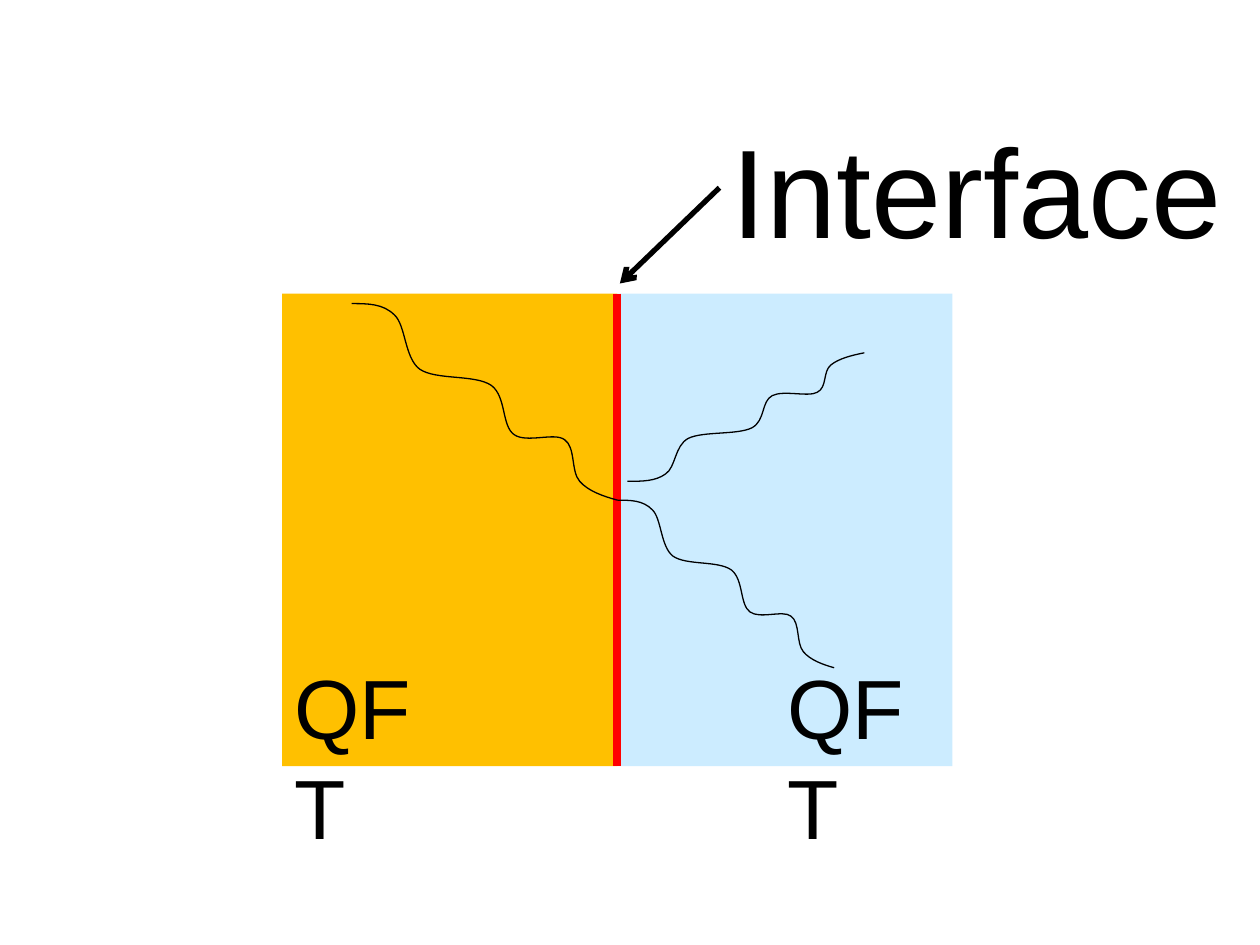
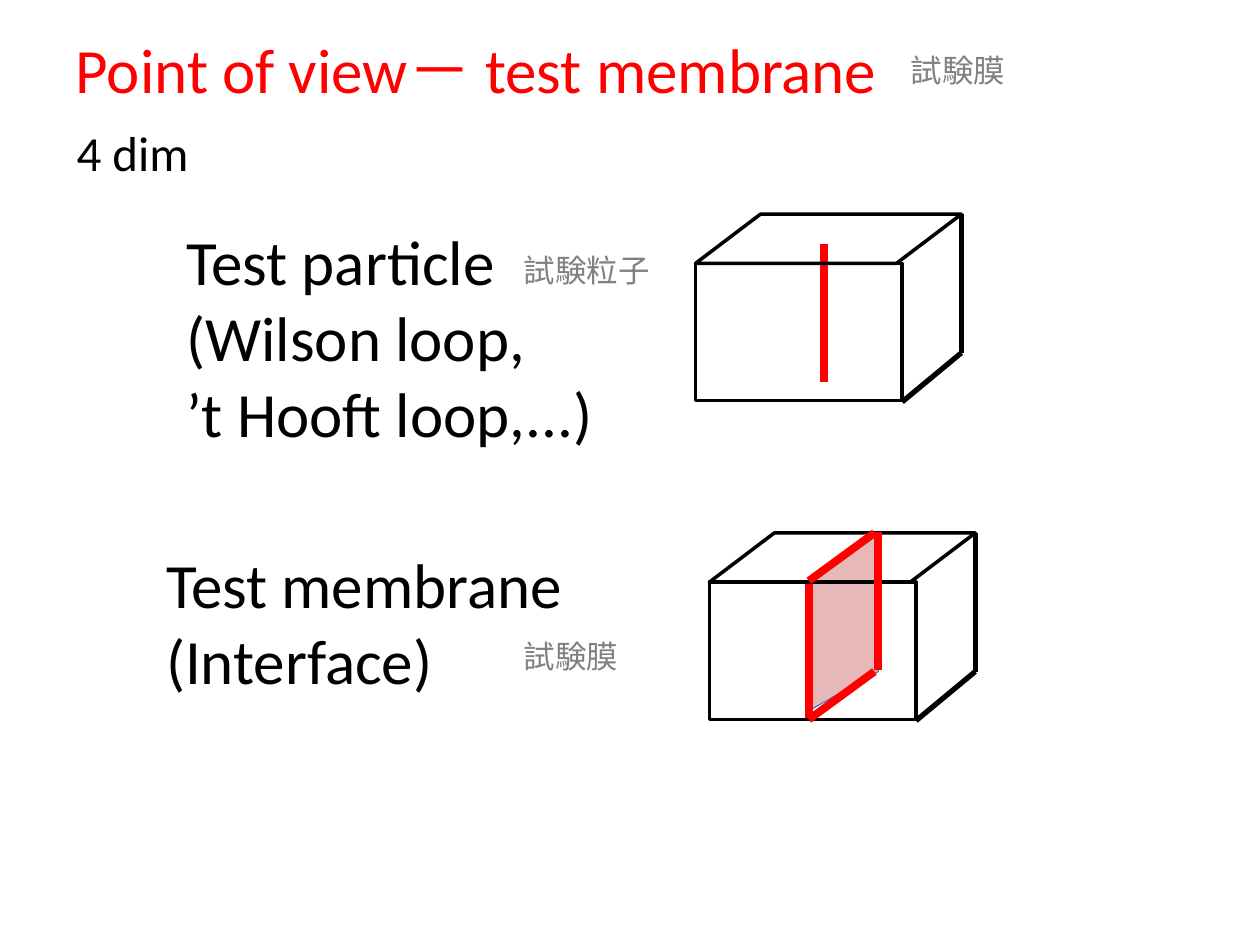
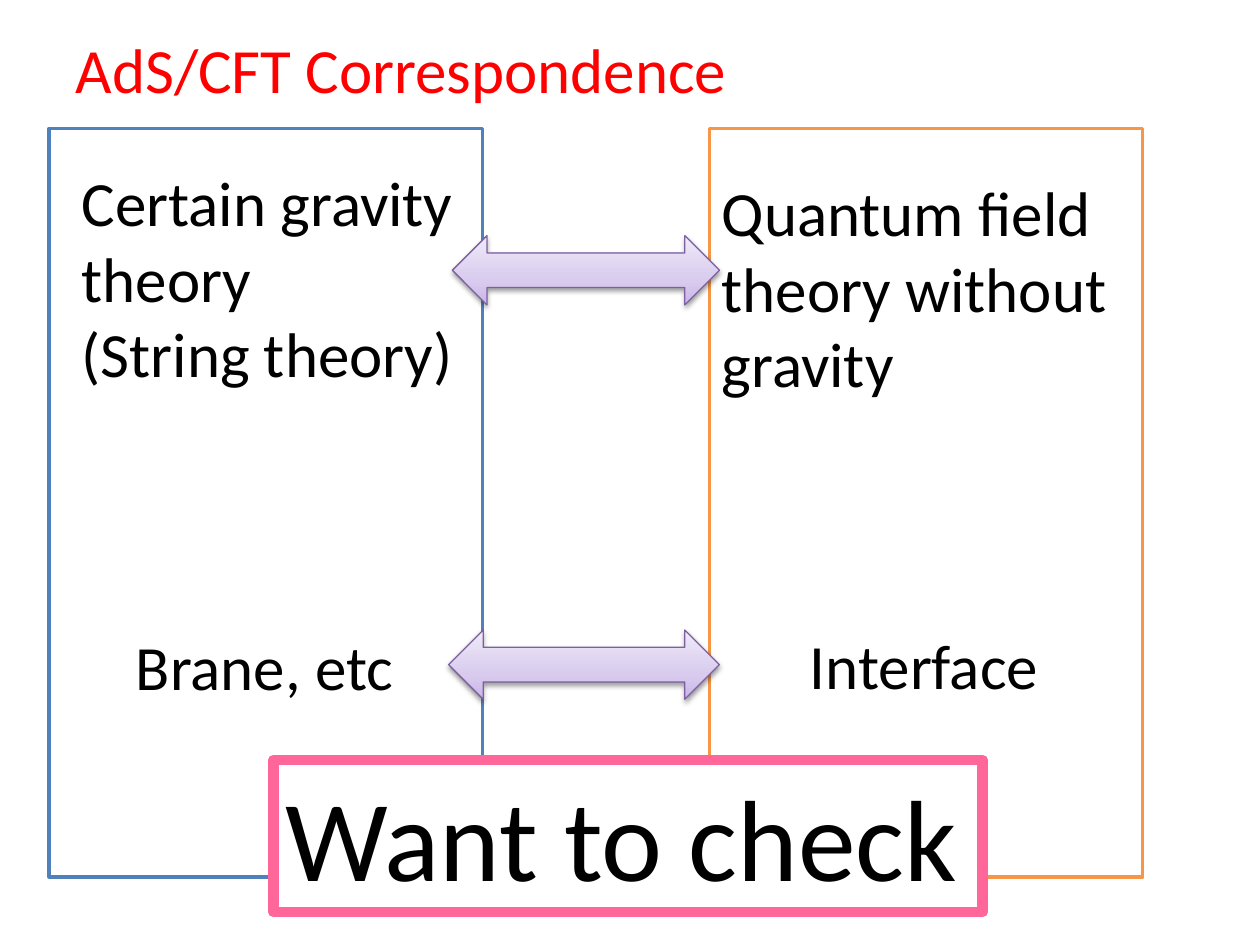
"""Build three slides on interfaces, test membranes and the AdS/CFT correspondence."""
from copy import deepcopy
from typing import NamedTuple

from lxml import etree
from pptx import Presentation
from pptx.dml.color import RGBColor
from pptx.enum import shapes, text
from pptx.oxml import parse_xml
from pptx.oxml.ns import nsdecls, qn
from pptx.util import Inches, Pt

BLACK = RGBColor(0x00, 0x00, 0x00)
WHITE = RGBColor(0xFF, 0xFF, 0xFF)
RED = RGBColor(0xFF, 0x00, 0x00)
GREY = RGBColor(0x80, 0x80, 0x80)
AMBER = RGBColor(0xFF, 0xC0, 0x00)
SKY = RGBColor(0xCC, 0xEC, 0xFF)
ROSE = RGBColor(0xE6, 0xB9, 0xB8)
STEEL = RGBColor(0x4B, 0x7E, 0xBC)
BLUE = RGBColor(0x4F, 0x81, 0xBD)
ORANGE = RGBColor(0xF7, 0x96, 0x46)
PINK = RGBColor(0xFF, 0x66, 0x99)
PURPLE = RGBColor(0x7D, 0x60, 0xA0)
LILACS = [(0, RGBColor(0xC9, 0xB5, 0xE8)), (0.35, RGBColor(0xD8, 0xCB, 0xEE)),
          (1, RGBColor(0xF0, 0xEA, 0xF9))]

RECT = shapes.MSO_SHAPE.RECTANGLE
WAVE_W, WAVE_H = 2.11, 1.56
WAVE = [(0, 0), (0.13, 0), (0.25, 0), (0.34, 0.09), (0.43, 0.17), (0.42, 0.43), (0.54, 0.52),
        (0.67, 0.61), (0.98, 0.56), (1.11, 0.65), (1.23, 0.74), (1.19, 0.97), (1.29, 1.04),
        (1.39, 1.11), (1.61, 1.02), (1.69, 1.08), (1.78, 1.14), (1.74, 1.33), (1.81, 1.41),
        (1.88, 1.49), (2, 1.53), (2.11, 1.56)]


class Box(NamedTuple):
    """Left, top, width and height in inches."""
    x: float
    y: float
    w: float
    h: float

    def emu(self):
        """Return the four lengths for python-pptx."""
        return [Inches(v) for v in self]


class Label(NamedTuple):
    """A text box with one paragraph per line."""
    box: Box
    lines: list[str]
    size: float = 36
    color: RGBColor = BLACK
    font: str = "Calibri"
    wrap: bool = False


def add_run(p, words: str, size: float, color: RGBColor, font: str) -> None:
    """Add one formatted run to a paragraph."""
    r = p.add_run()
    r.text = words
    r.font.size, r.font.name = Pt(size), font
    r.font.color.rgb = color


def add_label(s, label: Label):
    """Draw a label and return its shape."""
    sp = s.shapes.add_textbox(*label.box.emu())
    tf = sp.text_frame
    tf.word_wrap = label.wrap
    tf.auto_size = text.MSO_AUTO_SIZE.SHAPE_TO_FIT_TEXT
    for i, words in enumerate(label.lines):
        p = tf.add_paragraph() if i else tf.paragraphs[0]
        add_run(p, words, label.size, label.color, label.font)
    return sp


def add_title(s, words: str, width: float) -> None:
    """Place and fill the title placeholder."""
    sp = s.shapes.title
    sp.left, sp.top, sp.width, sp.height = Box(0.5, 0.3, width, 0.48).emu()
    tf = sp.text_frame
    tf.auto_size = text.MSO_AUTO_SIZE.NONE
    tf.vertical_anchor = text.MSO_ANCHOR.MIDDLE
    p = tf.paragraphs[0]
    p.alignment = text.PP_ALIGN.LEFT
    add_run(p, words, 36, RED, "Calibri")


def paint(sp, fill: RGBColor | None, line: RGBColor | None = None, width: float = 0) -> None:
    """Set the fill and outline of a shape and drop its shadow."""
    if fill is None:
        sp.fill.background()
    else:
        sp.fill.solid()
        sp.fill.fore_color.rgb = fill
    if line is None:
        sp.line.fill.background()
    else:
        sp.line.color.rgb, sp.line.width = line, Pt(width)
    sp.shadow.inherit = False


def add_preset(s, kind, box: Box, fill: RGBColor | None, line: RGBColor | None = None,
               width: float = 0):
    """Draw a painted preset shape."""
    sp = s.shapes.add_shape(kind, *box.emu())
    paint(sp, fill, line, width)
    return sp


def add_line(s, x1: float, y1: float, x2: float, y2: float, color: RGBColor = BLACK,
             width: float = 3, arrow: bool = False) -> None:
    """Draw a straight line, with an arrowhead at its end if wanted."""
    cx = s.shapes.add_connector(shapes.MSO_CONNECTOR.STRAIGHT, Inches(x1), Inches(y1),
                                Inches(x2), Inches(y2))
    cx.line.color.rgb, cx.line.width = color, Pt(width)
    if arrow:
        etree.SubElement(cx.line._get_or_add_ln(), qn("a:tailEnd"), type="arrow")
    etree.SubElement(cx._element.spPr, qn("a:effectLst"))


def add_outline(s, points: list[tuple[float, float]], close: bool):
    """Draw a freeform through points given in inches."""
    first, *rest = [(Inches(x), Inches(y)) for x, y in points]
    builder = s.shapes.build_freeform(*first)
    builder.add_line_segments(rest, close=close)
    return builder.convert_to_shape()


def add_wave(s, box: Box) -> None:
    """Draw the wavy ray across a box; a negative height makes it rise."""
    sp = add_outline(s, [(box.x + x * box.w / WAVE_W, box.y + y * box.h / WAVE_H)
                         for x, y in WAVE], close=False)
    paint(sp, None, BLACK, 0.75)
    segments = list(sp._element.iter(qn("a:lnTo")))
    for i in range(0, len(segments), 3):
        curve = etree.SubElement(segments[i].getparent(), qn("a:cubicBezTo"))
        for segment in segments[i:i + 3]:
            curve.append(segment[0])
            segment.getparent().remove(segment)


def add_cuboid(s, x: float, y: float) -> None:
    """Draw a see-through cuboid with its top edge at y."""
    width, height, depth, rise = 1.64, 1.09, 0.47, 0.39
    right, front = x + width + depth, y + rise
    add_preset(s, RECT, Box(x, front, width, height), None, BLACK, 2)
    top = add_preset(s, shapes.MSO_SHAPE.PARALLELOGRAM, Box(x, y, width + depth, rise),
                     None, BLACK, 2)
    top.adjustments[0] = 1.32
    add_line(s, right, y + height + 0.01, x + width, front + height + 0.01)
    add_line(s, right, y, right, y + height + 0.01)


def add_double_arrow(s, box: Box) -> None:
    """Draw a shaded two-way arrow."""
    sp = add_preset(s, shapes.MSO_SHAPE.LEFT_RIGHT_ARROW, box, None, PURPLE, 0.75)
    sp.fill.gradient()
    sp.fill.gradient_angle = 90
    stop = next(sp._element.iter(qn("a:gs")))
    stop.addnext(deepcopy(stop))
    for gs, (position, color) in zip(sp.fill.gradient_stops, LILACS):
        gs.position, gs.color.rgb = position, color
    sp._element.spPr.find(qn("a:effectLst")).append(parse_xml(
        f'<a:outerShdw {nsdecls("a")} blurRad="{Pt(3.1)}" dist="{Pt(1.6)}" dir="5400000" '
        'rotWithShape="0"><a:srgbClr val="000000"><a:alpha val="38000"/></a:srgbClr>'
        '</a:outerShdw>'))


def interface_slide(prs) -> None:
    """Two theories joined at an interface."""
    s = prs.slides.add_slide(prs.slide_layouts[6])
    left, middle, top, width, height = 2.24, 4.9, 2.33, 2.66, 3.75
    for x, color in ((left, AMBER), (middle, SKY)):
        add_preset(s, RECT, Box(x, top, width, height), color)
    add_line(s, middle, top, middle, top + height, RED, 4.5)
    for x in (left, 6.15):
        add_label(s, Label(Box(x, 5.15, 1.45, 0.91), ["QFT"], 48, font="Arial", wrap=True))
    add_line(s, 5.71, 1.49, 4.92, 2.25, arrow=True)
    add_label(s, Label(Box(5.71, 0.84, 4.13, 1.31), ["Interface"], 72, font="Arial"))
    for ray in (Box(2.79, 2.41, 2.11, 1.56), Box(4.98, 3.82, 1.88, -1.02),
                Box(4.9, 3.97, 1.72, 1.33)):
        add_wave(s, ray)


def membrane_slide(prs) -> None:
    """Test particle and test membrane in four dimensions."""
    s = prs.slides.add_slide(prs.slide_layouts[5])
    membrane = add_outline(s, [(6.42, 4.62), (6.97, 4.22), (6.97, 5.33), (6.42, 5.64)], close=False)
    paint(membrane, ROSE, STEEL, 0.75)
    add_title(s, "Point of view－ test membrane", 8.75)
    add_line(s, 6.54, 3.03, 6.54, 1.94, RED, 4.5)
    add_cuboid(s, 5.52, 1.7)
    add_line(s, 6.42, 5.71, 6.42, 4.62, RED, 4.5)
    add_cuboid(s, 5.63, 4.23)
    for edge in ((6.42, 4.61, 6.94, 4.23), (6.97, 5.32, 6.97, 4.22), (6.42, 5.71, 6.94, 5.33)):
        add_line(s, *edge, RED, 4.5)
    for label in (
        Label(Box(1.38, 1.72, 3.47, 1.92), ["Test particle", "(Wilson loop,", "’t Hooft loop,...)"]),
        Label(Box(1.22, 4.28, 3.44, 1.31), ["Test membrane", "(Interface)"]),
        Label(Box(0.51, 0.92, 1.1, 0.57), ["4 dim"], 28),
        Label(Box(4.06, 1.94, 1.21, 0.4), ["試験粒子"], 18, GREY),
        Label(Box(4.06, 5.01, 0.96, 0.4), ["試験膜"], 18, GREY),
        Label(Box(7.13, 0.36, 0.96, 0.4), ["試験膜"], 18, GREY),
    ):
        add_label(s, label)


def correspondence_slide(prs) -> None:
    """Gravity on the left matched to field theory on the right."""
    s = prs.slides.add_slide(prs.slide_layouts[5])
    add_title(s, "AdS/CFT Correspondence", 6.38)
    for x, color in ((0.39, BLUE), (5.63, ORANGE)):
        add_preset(s, RECT, Box(x, 1.02, 3.44, 5.94), WHITE, color, 2)
    for label in (
        Label(Box(0.55, 1.25, 3.2, 1.92), ["Certain gravity", "theory", "(String theory)"]),
        Label(Box(5.63, 1.33, 3.39, 1.92), ["Quantum field theory without gravity"], wrap=True),
        Label(Box(6.33, 4.92, 2.14, 0.71), ["Interface"]),
        Label(Box(0.98, 4.93, 2.25, 0.71), ["Brane, etc"]),
    ):
        add_label(s, label)
    for arrow in (Box(3.59, 1.87, 2.12, 0.55), Box(3.56, 5, 2.15, 0.55)):
        add_double_arrow(s, arrow)
    goal = add_label(s, Label(Box(2.17, 6.03, 5.63, 1.21), ["Want to check"], 66))
    paint(goal, WHITE, PINK, 6)


def main() -> None:
    """Build and save the presentation."""
    prs = Presentation()
    prs.slide_width, prs.slide_height = Inches(10), Inches(7.5)
    interface_slide(prs)
    membrane_slide(prs)
    correspondence_slide(prs)
    prs.save("out.pptx")


if __name__ == "__main__":
    main()
